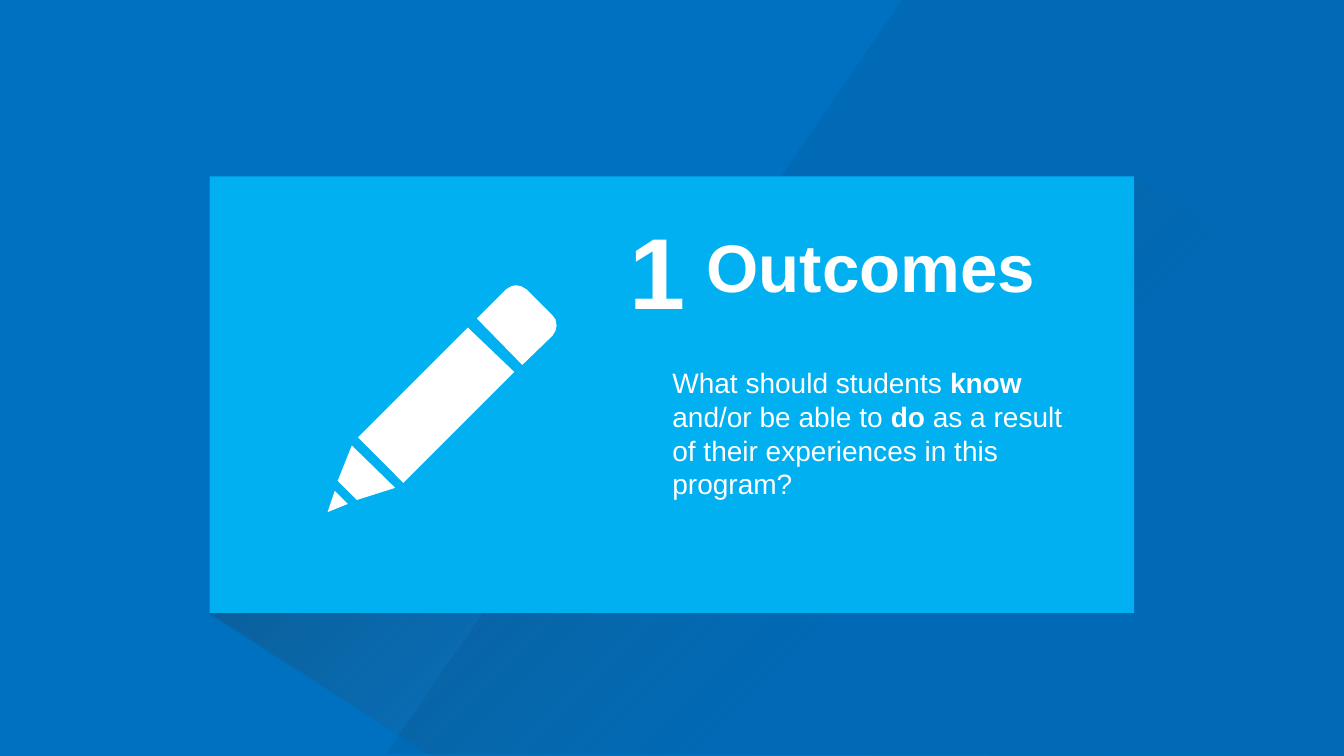
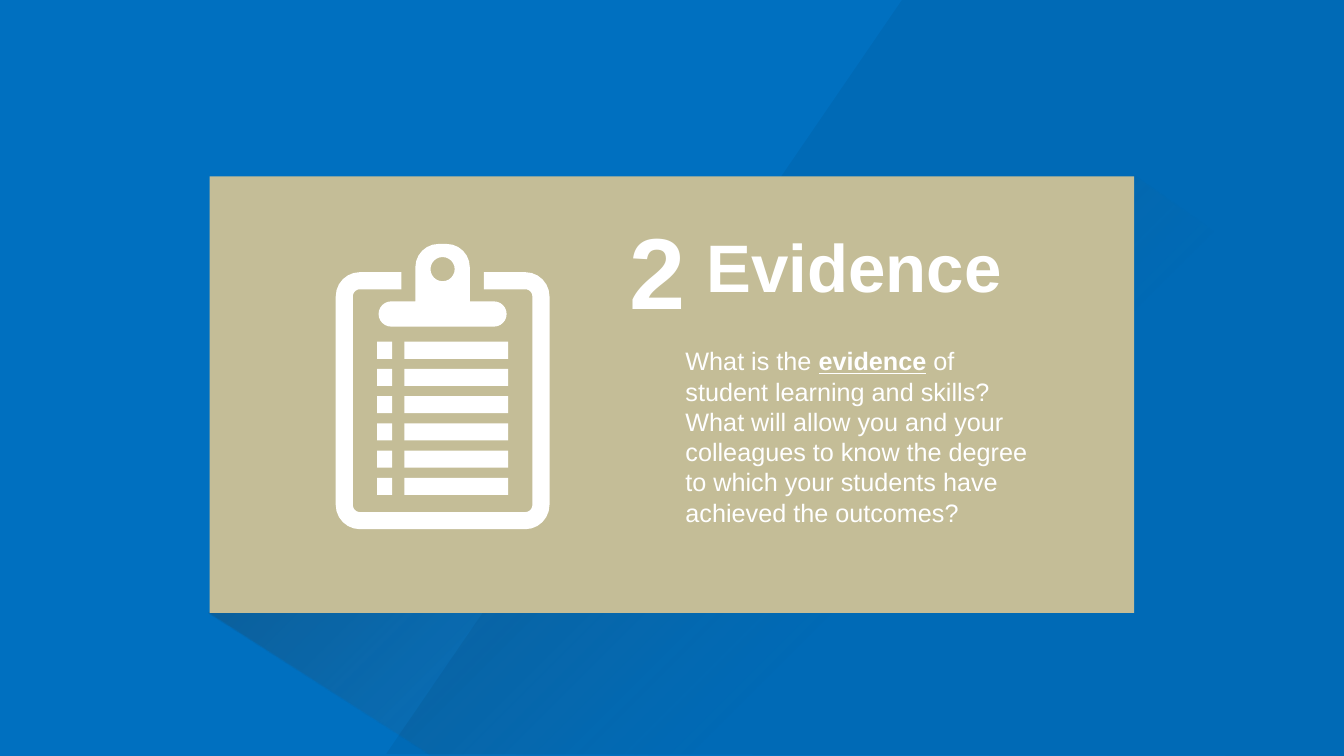
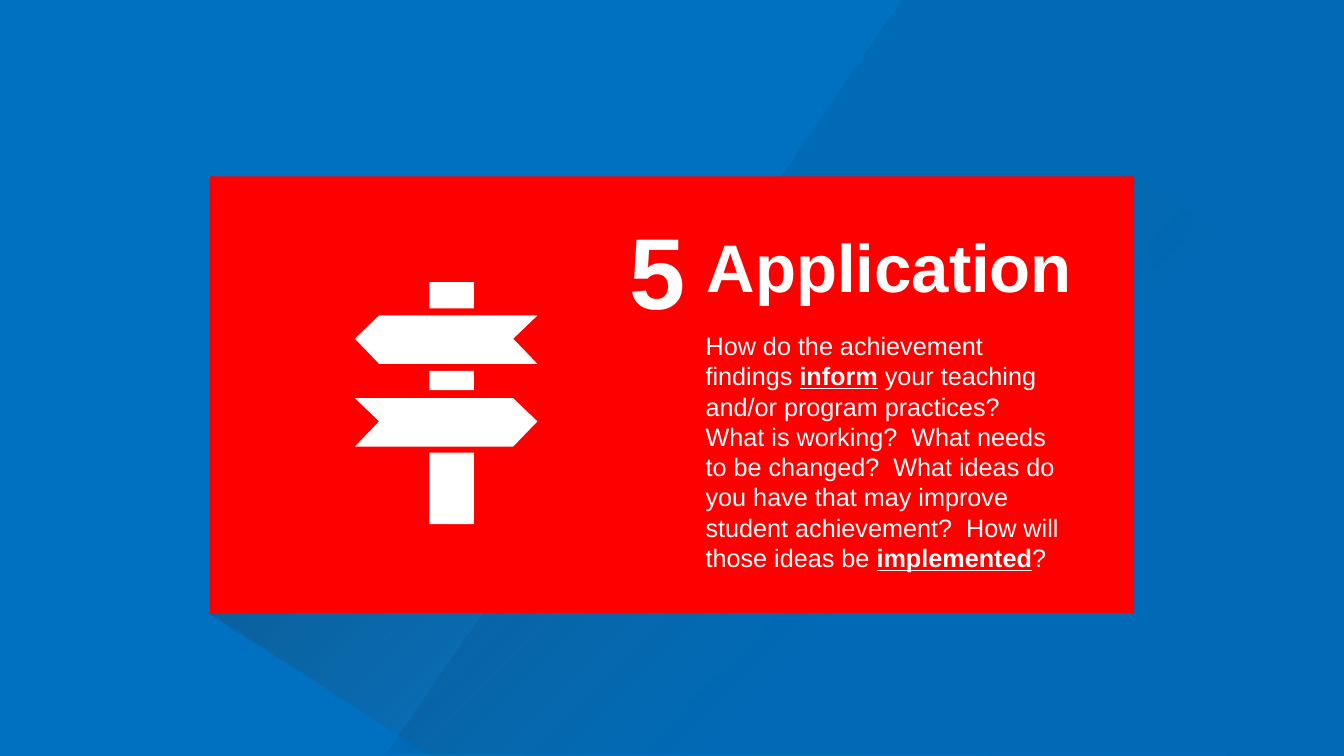
from dataclasses import dataclass
from math import cos, radians, sin

from lxml import etree
from pptx import Presentation
from pptx.dml.color import RGBColor
from pptx.enum.shapes import MSO_SHAPE
from pptx.enum.text import MSO_AUTO_SIZE
from pptx.oxml.ns import qn
from pptx.util import Inches, Pt

RECTANGLE = MSO_SHAPE.RECTANGLE
GROW = MSO_AUTO_SIZE.SHAPE_TO_FIT_TEXT


@dataclass(frozen=True)
class Theme:
    font: str = "Arial"
    background: str = "0070C0"
    white: str = "FFFFFF"
    black: str = "000000"
    gray: str = "6B6B6B"
    sky: str = "00B0F0"
    sand: str = "C4BD97"
    red: str = "FF0000"
    number_size: int = 72
    heading_size: int = 48
    large_body_size: int = 20
    body_size: int = 18


THEME = Theme()


def set_opacity(shape, *percents):
    colors = shape.element.spPr.iter(qn("a:srgbClr"))
    for color, percent in zip(colors, percents):
        etree.SubElement(color, qn("a:alpha"), val=str(percent * 1000))


def paint(shape, color):
    shape.shadow.inherit = False
    shape.line.fill.background()
    shape.fill.solid()
    shape.fill.fore_color.rgb = RGBColor.from_string(color)
    return shape


def add_rectangle(shapes, left, top, width, height, color=THEME.white):
    lengths = [Inches(value) for value in (left, top, width, height)]
    return paint(shapes.add_shape(RECTANGLE, *lengths), color)


def add_outline(shapes, *contours, color=THEME.white):
    builder = None
    for contour in contours:
        start, *rest = [(Inches(x), Inches(y)) for x, y in contour]
        if builder is None:
            builder = shapes.build_freeform(*start)
        else:
            builder.move_to(*start)
        builder.add_line_segments(rest, close=True)
    return paint(builder.convert_to_shape(), color)


def arc(center_x, center_y, radius, start, end):
    steps = max(4, abs(end - start) // 15)
    angles = [radians(start + (end - start) * step / steps) for step in range(steps + 1)]
    return [(center_x + radius * cos(angle), center_y + radius * sin(angle)) for angle in angles]


def add_text(slide, left, top, width, height, runs, size, bold=False, underline=False, wrap=False):
    box = slide.shapes.add_textbox(Inches(left), Inches(top), Inches(width), Inches(height))
    frame = box.text_frame
    frame.word_wrap = wrap
    frame.auto_size = GROW
    para = frame.paragraphs[0]
    for text, emphasized in runs:
        span = para.add_run()
        span.text = text
        span.font.name = THEME.font
        span.font.size = Pt(size)
        span.font.color.rgb = RGBColor.from_string(THEME.white)
        span.font.bold = bold or emphasized
        span.font.underline = underline and emphasized


def add_long_shadow(slide):
    shadow = add_outline(
        slide.shapes,
        [(10.13, 4.52), (2.07, 6.08), (4.28, 7.5), (13.36, 7.49), (13.37, 3.22), (11.24, 1.74)],
    )
    shadow.fill.gradient()
    shadow.fill.gradient_angle = 315
    stops = ((0, THEME.black), (0.62, THEME.gray))
    for stop, (position, color) in zip(shadow.fill.gradient_stops, stops):
        stop.position = position
        stop.color.rgb = RGBColor.from_string(color)
    set_opacity(shadow, 40, 0)


def add_diagonal_veil(slide):
    corners = [(3.83, 7.48), (8.96, -0.02), (13.33, 0), (13.33, 7.5)]
    set_opacity(add_outline(slide.shapes, corners, color=THEME.black), 5)


def add_card_slide(deck, color, number, heading, heading_width):
    slide = deck.slides.add_slide(deck.slide_layouts[6])
    add_long_shadow(slide)
    add_diagonal_veil(slide)
    add_rectangle(slide.shapes, 2.08, 1.75, 9.17, 4.33, color)
    add_text(slide, 6.91, 2.19, heading_width, 0.91, [(heading, True)], THEME.heading_size)
    add_text(slide, 6.15, 2.02, 0.76, 1.31, [(number, True)], THEME.number_size)
    return slide


def draw_pencil(slide):
    shapes = slide.shapes.add_group_shape().shapes
    eraser = [
        (5.12, 2.83), (5.17, 2.84), (5.22, 2.87), (5.48, 3.13), (5.51, 3.17), (5.52, 3.23),
        (5.51, 3.28), (5.48, 3.33), (5.18, 3.62), (4.73, 3.16), (5.02, 2.87), (5.07, 2.84),
    ]
    barrel = [(4.64, 3.25), (5.1, 3.69), (4, 4.79), (3.55, 4.34)]
    wood = [(3.49, 4.42), (3.92, 4.84), (3.54, 4.96), (3.35, 4.77)]
    tip = [(3.32, 4.87), (3.45, 5), (3.25, 5.08)]
    for part in (eraser, barrel, wood, tip):
        add_outline(shapes, part)


def draw_clipboard(slide):
    shapes = slide.shapes.add_group_shape().shapes
    hole = arc(4.39, 2.67, 0.12, 0, 360)
    clip = [
        *arc(4.35, 2.65, 0.23, 180, 270),
        *arc(4.43, 2.65, 0.23, 270, 360),
        (4.66, 2.99),
        *arc(4.9, 3.115, 0.125, -90, 90),
        *arc(3.88, 3.115, 0.125, 90, 270),
        (4.12, 2.99),
    ]
    add_outline(shapes, clip, hole)

    for row in range(6):
        top = 3.39 + 0.27 * row
        add_rectangle(shapes, 3.74, top, 0.15, 0.17)
        add_rectangle(shapes, 4.01, top, 1.03, 0.17)

    corners = [(3.57, 2.94, 270), (3.57, 5.01, 180), (5.21, 5.01, 90), (5.21, 2.94, 0)]
    board = [(3.98, 2.7)]
    for x, y, angle in corners:
        board += arc(x, y, 0.24, angle, angle - 90)
    board += [(4.8, 2.7), (4.8, 2.87)]
    for x, y, angle in reversed(corners):
        board += arc(x, y, 0.07, angle - 90, angle)
    add_outline(shapes, board + [(3.98, 2.87)])


def draw_signpost(slide):
    shapes = slide.shapes.add_group_shape().shapes
    left_sign = [(3.76, 3.13), (5.33, 3.13), (5.09, 3.36), (5.33, 3.61), (3.76, 3.61), (3.52, 3.36)]
    right_sign = [(8.85 - x, y + 0.82) for x, y in left_sign]
    add_outline(shapes, left_sign)
    add_outline(shapes, right_sign)
    for top, height in ((2.8, 0.26), (3.68, 0.19), (4.49, 0.71)):
        add_rectangle(shapes, 4.26, top, 0.44, height)


def build_outcomes(deck):
    slide = add_card_slide(deck, THEME.sky, "1", "Outcomes", 3.5)
    runs = [
        ("What should students ", False),
        ("know ", True),
        ("and/or be able to ", False),
        ("do", True),
        (" as a result of their experiences in this program?", False),
    ]
    add_text(slide, 6.57, 3.58, 4.12, 1.38, runs, THEME.large_body_size, wrap=True)
    draw_pencil(slide)


def build_evidence(deck):
    slide = add_card_slide(deck, THEME.sand, "2", "Evidence", 3.16)
    draw_clipboard(slide)
    runs = [
        ("What is the ", False),
        ("evidence", True),
        (
            " of student learning and skills?  What will allow you and your colleagues "
            "to know the degree to which your students have achieved the outcomes?",
            False,
        ),
    ]
    add_text(slide, 6.7, 3.38, 3.75, 1.92, runs, THEME.body_size, underline=True, wrap=True)


def build_application(deck):
    slide = add_card_slide(deck, THEME.red, "5", "Application", 3.87)
    runs = [
        ("How do the achievement findings ", False),
        ("inform", True),
        (
            " your teaching and/or program practices?  What is working?  What needs to be "
            "changed?  What ideas do you have that may improve student achievement?  "
            "How will those ideas be ",
            False,
        ),
        ("implemented", True),
        ("?", False),
    ]
    add_text(slide, 6.9, 3.23, 3.75, 2.52, runs, THEME.body_size, underline=True, wrap=True)
    draw_signpost(slide)


def main():
    deck = Presentation()
    deck.slide_width = Inches(13.33)
    deck.slide_height = Inches(7.5)
    backdrop = deck.slide_master.background.fill
    backdrop.solid()
    backdrop.fore_color.rgb = RGBColor.from_string(THEME.background)
    build_outcomes(deck)
    build_evidence(deck)
    build_application(deck)
    deck.save("out.pptx")


if __name__ == "__main__":
    main()
